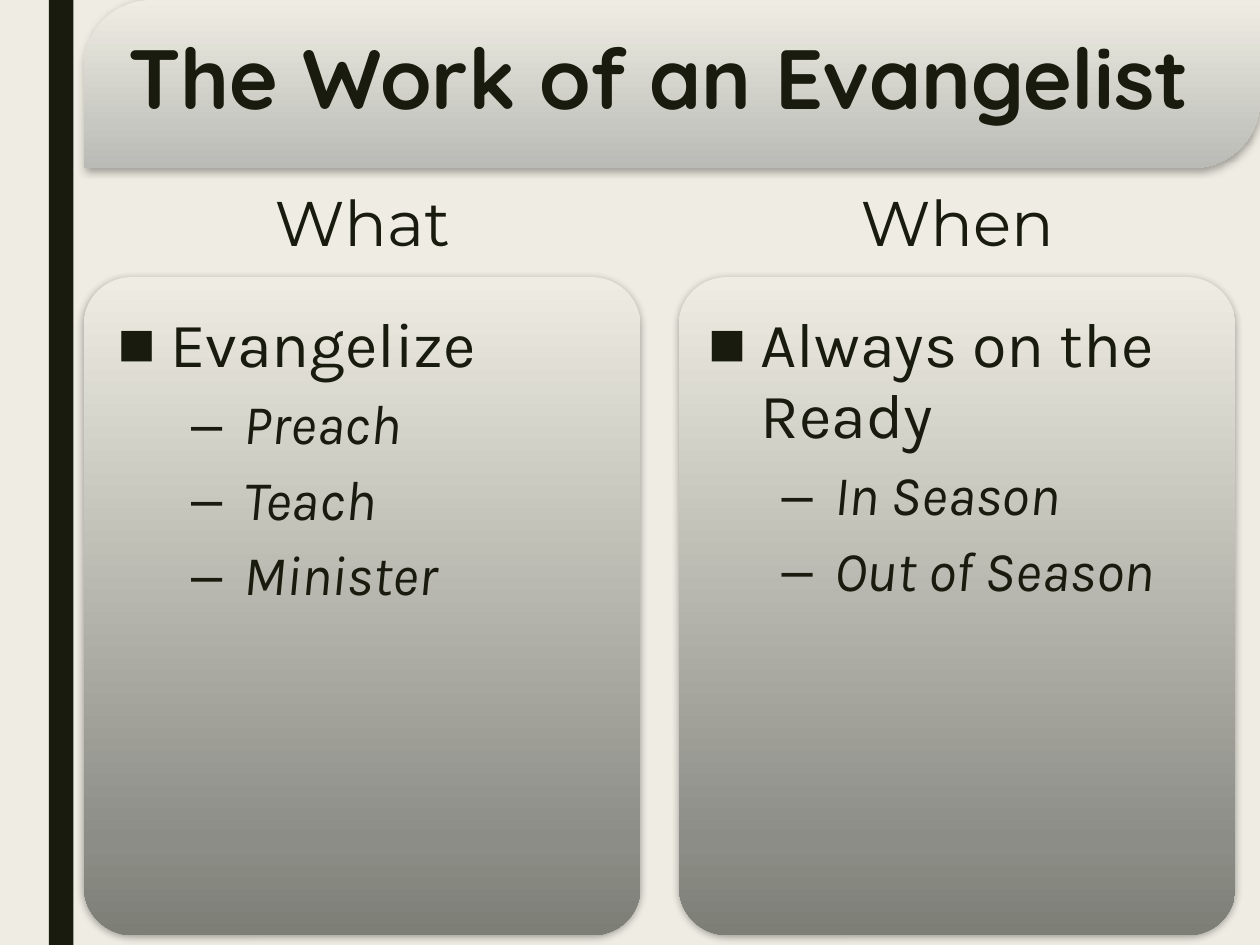
import pptx
import pptx.util
from lxml import etree
from pptx.dml.color import RGBColor
from pptx.enum.shapes import MSO_SHAPE
from pptx.enum.text import MSO_ANCHOR, MSO_AUTO_SIZE, PP_ALIGN
from pptx.oxml import parse_xml
from pptx.oxml.ns import nsdecls, qn

Pt = pptx.util.Pt

COLORS = {"paper": "EFEDE3", "ink": "191B0E", "silver": "BABBB6",
          "gray": "8C8D86", "dark": "7D7E76", "shadow": "000000"}
BANNER_STOPS = [(0, "paper"), (100, "silver")]
PANEL_STOPS = [(0, "paper"), (86, "gray"), (100, "dark")]

# Bullet, left indent, space before, size and italic for each list level
LEVELS = [("■", 30, 10, 36, False), ("–", 72, 5, 32, True)]

COLUMNS = [
    {"panel": (48, 158.4, 318, 376), "heading_box": (54, 106, 306, 47.5),
     "list_box": (60, 174, 292, 346), "heading": "What", "wrap": False,
     "items": [("Evangelize", 0), ("Preach", 1), ("Teach", 1), ("Minister", 1)]},
    {"panel": (388, 158.4, 318, 376), "heading_box": (400, 106, 294, 47.5),
     "list_box": (397.5, 174, 292, 346), "heading": "When", "wrap": True,
     "items": [("Always on the Ready", 0), ("In Season", 1), ("Out of Season", 1)]},
]


def color(name):
    return RGBColor.from_string(COLORS[name])


def place(shape, box):
    shape.left, shape.top, shape.width, shape.height = (Pt(length) for length in box)


def add_back_shape(page, kind, box):
    """Add a lineless shape behind the placeholders."""
    shape = page.shapes.add_shape(kind, *(Pt(length) for length in box))
    shape.shadow.inherit = False
    shape.line.fill.background()
    page.placeholders[0].element.addprevious(shape.element)
    return shape


def add_gradient_card(page, box, corners, stops):
    """Add a card with a downward gradient and a soft shadow."""
    card = add_back_shape(page, MSO_SHAPE.ROUND_2_DIAG_RECTANGLE, box)
    for index, corner in enumerate(corners):
        card.adjustments[index] = corner
    card.fill.gradient()
    card.fill.gradient_angle = 270
    stop_list = card.element.spPr.find(qn("a:gradFill")).find(qn("a:gsLst"))
    for stop in list(stop_list):
        stop_list.remove(stop)
    for percent, name in stops:
        stop_list.append(parse_xml(
            f'<a:gs {nsdecls("a")} pos="{percent * 1000}">'
            f'<a:srgbClr val="{COLORS[name]}"/></a:gs>'))
    effects = card.element.spPr.find(qn("a:effectLst"))
    effects.append(parse_xml(
        f'<a:outerShdw {nsdecls("a")} blurRad="{Pt(4.5)}" dist="{Pt(1.5)}" '
        f'dir="5400000" rotWithShape="0"><a:srgbClr val="{COLORS["shadow"]}">'
        '<a:alpha val="35000"/></a:srgbClr></a:outerShdw>'))


def prepare_frame(holder, anchor, wrap=True):
    frame = holder.text_frame
    frame.auto_size = MSO_AUTO_SIZE.NONE
    frame.vertical_anchor = anchor
    frame.word_wrap = wrap
    return frame


def style(para, font_name, size, line_spacing, bold=False, italic=False):
    para.line_spacing = line_spacing
    para.font.name = font_name
    para.font.size = Pt(size)
    para.font.bold = bold
    para.font.italic = italic
    para.font.color.rgb = color("ink")


def add_bullet(para, mark, indent):
    properties = para._p.get_or_add_pPr()
    properties.set("marL", str(Pt(indent)))
    properties.set("indent", str(Pt(-30)))
    etree.SubElement(properties, qn("a:buFont")).set("typeface", "Arial")
    etree.SubElement(properties, qn("a:buChar")).set("char", mark)


def build_title(page, box):
    left, top, width, height = box
    add_gradient_card(page, box, (0.4, 0), BANNER_STOPS)
    title = page.shapes.title
    place(title, (left + 18, top + 18, width - 18, height - 36))
    para = prepare_frame(title, MSO_ANCHOR.TOP).paragraphs[0]
    para.text = "The Work of an Evangelist"
    para.alignment = PP_ALIGN.LEFT
    style(para, "Quicksand", 48, 0.89, bold=True)


def build_side_bar(page, box):
    bar = add_back_shape(page, MSO_SHAPE.RECTANGLE, box)
    bar.fill.solid()
    bar.fill.fore_color.rgb = color("ink")


def build_heading(holder, box, text, wrap):
    place(holder, box)
    holder.fill.solid()
    holder.fill.fore_color.rgb = color("paper")
    para = prepare_frame(holder, MSO_ANCHOR.MIDDLE, wrap).paragraphs[0]
    para.text = text
    para.alignment = PP_ALIGN.CENTER
    para.space_before = Pt(0)
    style(para, "Montserrat", 36, 0.84)


def build_list(holder, box, items):
    place(holder, box)
    frame = prepare_frame(holder, MSO_ANCHOR.TOP)
    for index, (text, level) in enumerate(items):
        mark, indent, before, size, italic = LEVELS[level]
        para = frame.add_paragraph() if index else frame.paragraphs[0]
        para.text = text
        para.level = level
        add_bullet(para, mark, indent)
        para.space_before = Pt(before if index else 0)
        para.space_after = Pt(2)
        style(para, "Karla", size, 0.94, italic=italic)


def build_column(page, column, heading, listing):
    add_gradient_card(page, column["panel"], (0.085, 0.087), PANEL_STOPS)
    build_heading(heading, column["heading_box"], column["heading"], column["wrap"])
    build_list(listing, column["list_box"], column["items"])


def main():
    deck = pptx.Presentation()
    deck.slide_width, deck.slide_height = Pt(720), Pt(540)
    page = deck.slides.add_slide(deck.slide_layouts.get_by_name("Comparison"))
    page.background.fill.solid()
    page.background.fill.fore_color.rgb = color("paper")

    # Banner and side bar
    build_title(page, (48, 0, 672, 96))
    build_side_bar(page, (28, 0, 14, 540))

    # Two columns: heading and list placeholders come in pairs
    holders = list(page.placeholders)[1:]
    for column, heading, listing in zip(COLUMNS, holders[::2], holders[1::2]):
        build_column(page, column, heading, listing)

    deck.save("out.pptx")


if __name__ == "__main__":
    main()
